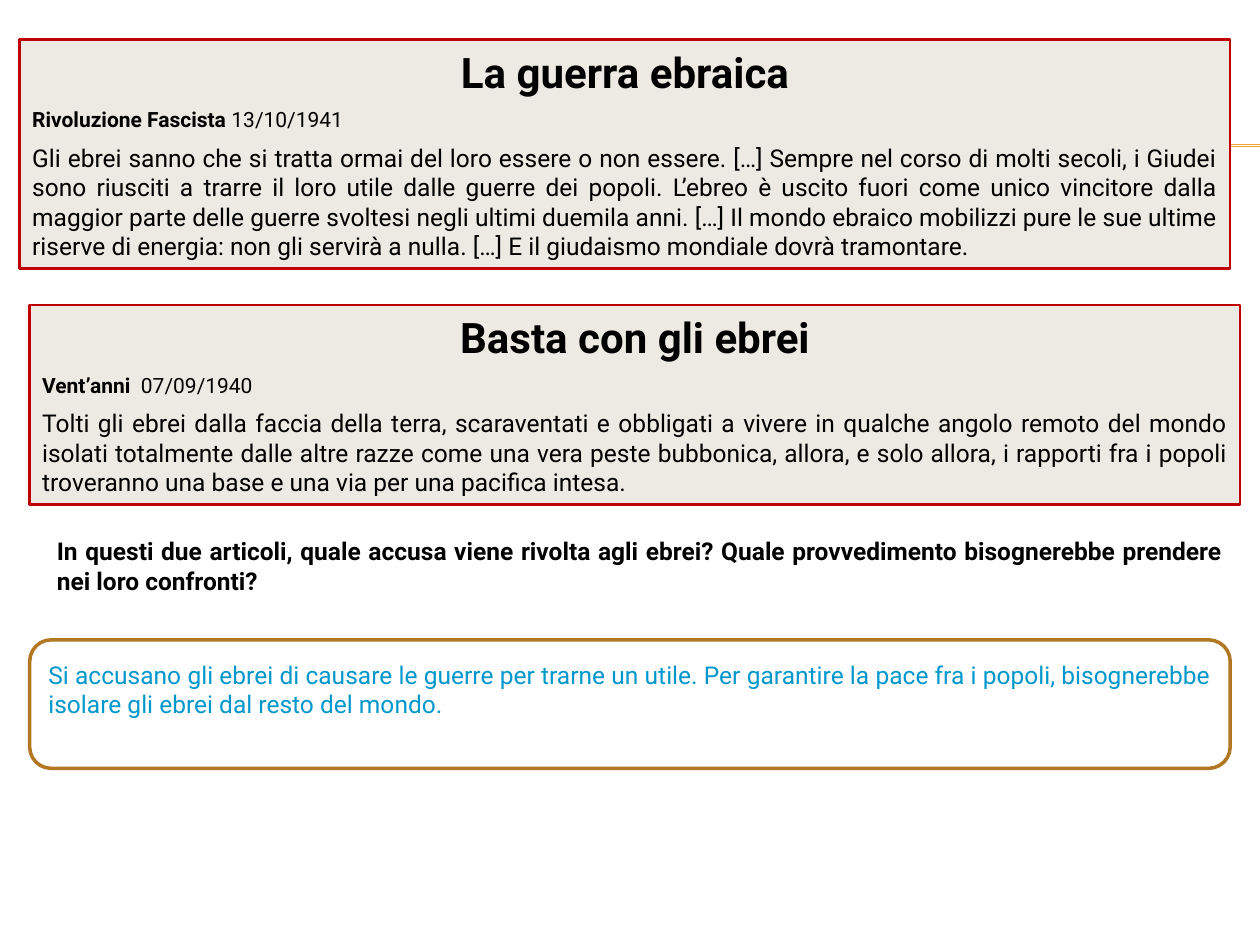
from lxml import etree
from pptx import Presentation
from pptx.dml.color import RGBColor
from pptx.enum.shapes import MSO_CONNECTOR, MSO_SHAPE
from pptx.enum.text import MSO_ANCHOR, PP_ALIGN
from pptx.oxml.ns import qn
from pptx.util import Cm, Pt

RECT, ROUNDED = MSO_SHAPE.RECTANGLE, MSO_SHAPE.ROUNDED_RECTANGLE
LEFT, CENTER, JUSTIFY = PP_ALIGN.LEFT, PP_ALIGN.CENTER, PP_ALIGN.JUSTIFY


def add_panel(kind, left, top, width, height, fill=None, line=None, weight=1.5, inset=0.13):
    panel = slide.shapes.add_shape(kind, Cm(left), Cm(top), Cm(width), Cm(height))
    panel.shadow.inherit = False
    for paint, color in ((panel.fill, fill), (panel.line.fill, line)):
        if color:
            paint.solid()
            paint.fore_color.rgb = RGBColor.from_string(color)
        else:
            paint.background()
    if line:
        panel.line.width = Pt(weight)
    frame = panel.text_frame
    frame.word_wrap = True
    frame.vertical_anchor = MSO_ANCHOR.TOP
    frame.margin_left = frame.margin_right = Cm(0.25)
    frame.margin_top, frame.margin_bottom = Cm(inset), Cm(0.13)
    return frame


def write(paragraph, text, size=14, bold=False, color="000000", align=JUSTIFY, after=0):
    paragraph.alignment = align
    paragraph.space_after = Pt(after)
    run = paragraph.add_run()
    run.text = text
    run.font.name = "Roboto"
    run.font.size = Pt(size)
    run.font.bold = bold
    run.font.color.rgb = RGBColor.from_string(color)


deck = Presentation()
deck.slide_width, deck.slide_height = Cm(25.4), Cm(19.05)
slide = deck.slides.add_slide(deck.slide_layouts[6])

for rule_y in (2.92, 2.95):
    rule = slide.shapes.add_connector(
        MSO_CONNECTOR.STRAIGHT, Cm(1.42), Cm(rule_y), Cm(25.4), Cm(rule_y))
    rule.line.color.rgb = RGBColor.from_string("F0A22E")
    rule.line.width = Pt(0.75)
    etree.SubElement(rule._element.spPr, qn("a:effectLst"))

articles = [
    (0.4, 0.8, 4.62, "La guerra ebraica", "Rivoluzione Fascista ", "13/10/1941",
     "Gli ebrei sanno che si tratta ormai del loro essere o non essere. […] Sempre nel corso "
     "di molti secoli, i Giudei sono riusciti a trarre il loro utile dalle guerre dei popoli. "
     "L’ebreo è uscito fuori come unico vincitore dalla maggior parte delle guerre svoltesi "
     "negli ultimi duemila anni. […] Il mondo ebraico mobilizzi pure le sue ultime riserve di "
     "energia: non gli servirà a nulla. […] E il giudaismo mondiale dovrà tramontare."),
    (0.6, 6.15, 4.02, "Basta con gli ebrei", "Vent’anni  ", "07/09/1940",
     "Tolti gli ebrei dalla faccia della terra, scaraventati e obbligati a vivere in qualche "
     "angolo remoto del mondo isolati totalmente dalle altre razze come una vera peste "
     "bubbonica, allora, e solo allora, i rapporti fra i popoli troveranno una base e una via "
     "per una pacifica intesa."),
]
for left, top, height, headline, newspaper, date, excerpt in articles:
    article = add_panel(RECT, left, top, 24.4, height, fill="ECEAE3", line="C00000")
    write(article.paragraphs[0], headline, size=24, bold=True, align=CENTER, after=6)
    source = article.add_paragraph()
    write(source, newspaper, size=12, bold=True, align=LEFT, after=6)
    write(source, date, size=12, align=LEFT, after=6)
    write(article.add_paragraph(), excerpt)

question = add_panel(ROUNDED, 0.8, 10.52, 24.2, 1.98, inset=0.2)
write(question.paragraphs[0],
      "In questi due articoli, quale accusa viene rivolta agli ebrei? Quale provvedimento "
      "bisognerebbe prendere nei loro confronti?", bold=True)

answer = add_panel(ROUNDED, 0.6, 12.9, 24.2, 2.59, fill="FFFFFF", line="B17722",
                   weight=2, inset=0.27)
write(answer.paragraphs[0],
      "Si accusano gli ebrei di causare le guerre per trarne un utile. Per garantire la pace "
      "fra i popoli, bisognerebbe isolare gli ebrei dal resto del mondo.", color="0097CC")

deck.save("out.pptx")
